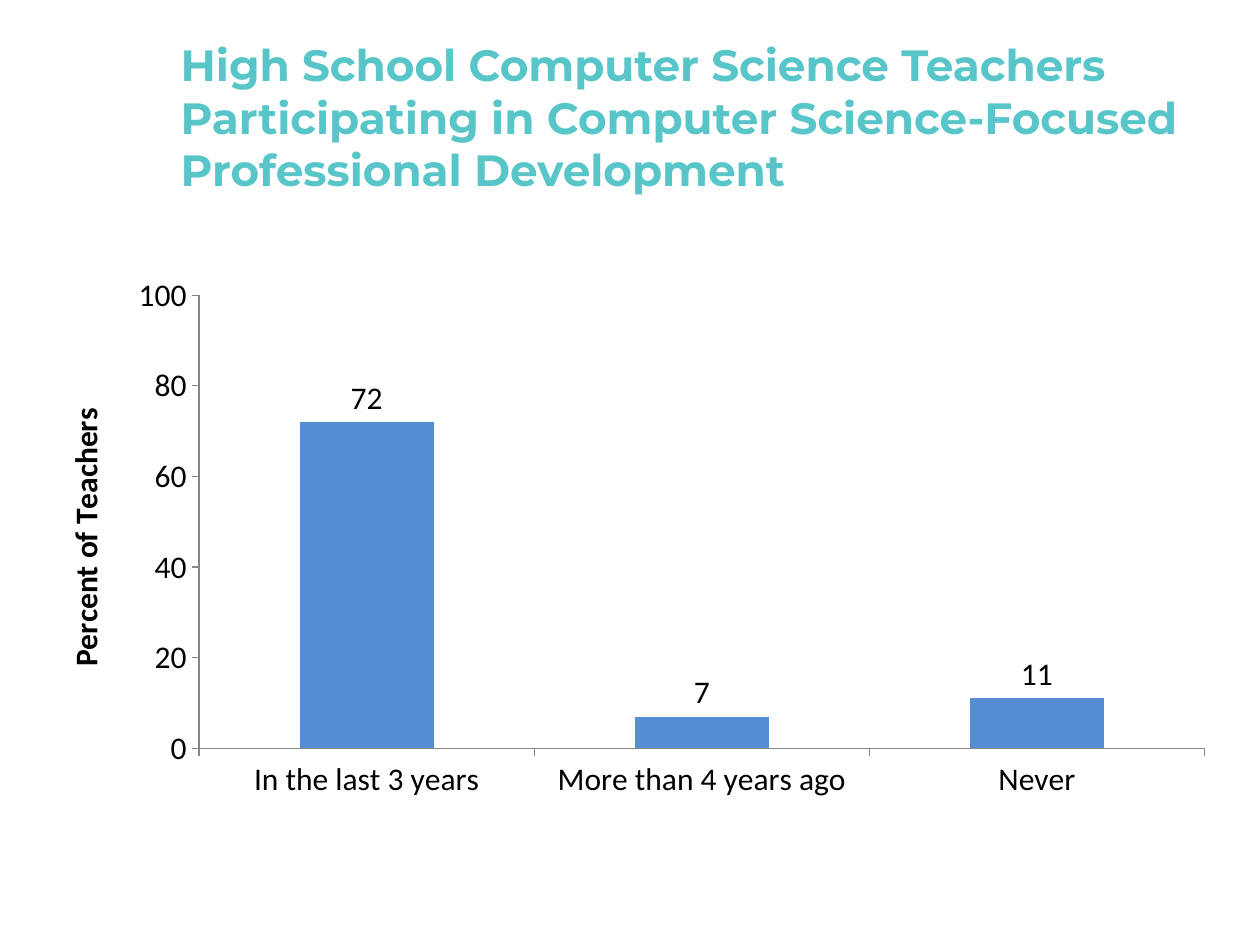
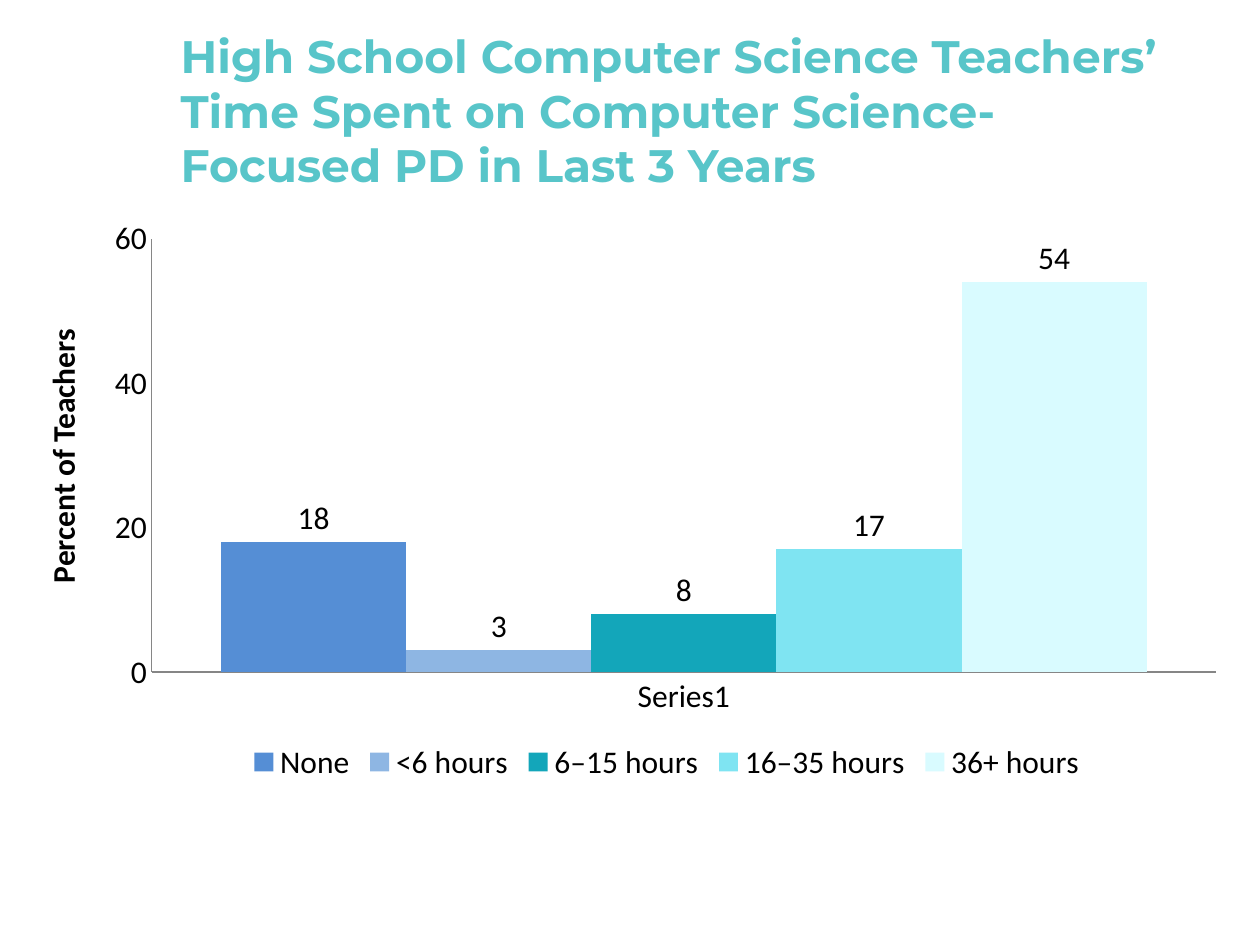
from pptx import Presentation
from pptx.chart.data import CategoryChartData
from pptx.dml.color import RGBColor
from pptx.enum.chart import XL_CHART_TYPE, XL_LABEL_POSITION, XL_LEGEND_POSITION, XL_TICK_MARK
from pptx.enum.text import MSO_ANCHOR, MSO_AUTO_SIZE, PP_ALIGN
from pptx.oxml import parse_xml
from pptx.oxml.ns import nsdecls, qn
from pptx.util import Pt

COLORS = {
    "title": "58C5C9",
    "text": "000000",
    "axis": "868686",
    "blue": "558ED5",
    "light blue": "8EB6E3",
    "teal": "13A6BA",
    "aqua": "7FE4F2",
    "pale aqua": "D9FBFF",
}
TITLE_FORMAT = {"name": "Montserrat", "bold": True}
CHART_FORMAT = {"name": "Calibri", "size": Pt(18), "bold": False}
AXIS_TITLE_FORMAT = {**CHART_FORMAT, "bold": True}
AXIS_TITLE = "Percent of Teachers"


def color(name):
    return RGBColor.from_string(COLORS[name])


def set_values(target, values):
    for attribute, value in values.items():
        setattr(target, attribute, value)


def format_font(font, values, color_name="text"):
    set_values(font, values)
    font.color.rgb = color(color_name)


def add_title_slide(presentation, title, top, size):
    slide = presentation.slides.add_slide(presentation.slide_layouts[5])
    shape = slide.shapes.title
    set_values(shape, {"left": Pt(96), "top": Pt(top), "width": Pt(588), "height": Pt(90)})
    frame = shape.text_frame
    frame.text = title
    set_values(frame, {"auto_size": MSO_AUTO_SIZE.NONE, "word_wrap": True,
                       "vertical_anchor": MSO_ANCHOR.MIDDLE})
    paragraph = frame.paragraphs[0]
    paragraph.alignment = PP_ALIGN.LEFT
    format_font(paragraph.runs[0].font, {**TITLE_FORMAT, "size": Pt(size)}, "title")
    return slide


def place_plot(chart, fractions):
    plot_area = chart.element.chart.plotArea
    for layout in plot_area.findall(qn("c:layout")):
        plot_area.remove(layout)
    modes = '<c:xMode val="edge"/><c:yMode val="edge"/>'
    sizes = "".join(f'<c:{key} val="{value}"/>' for key, value in zip("xywh", fractions))
    plot_area.insert(0, parse_xml(
        f'<c:layout {nsdecls("c")}><c:manualLayout><c:layoutTarget val="inner"/>'
        f'{modes}{sizes}</c:manualLayout></c:layout>'))


def add_column_chart(slide, box, categories, series_rows, maximum, gap, tick, plot_box):
    data = CategoryChartData()
    data.categories = categories
    for name, values, _ in series_rows:
        data.add_series(name, values)
    chart = slide.shapes.add_chart(
        XL_CHART_TYPE.COLUMN_CLUSTERED, *map(Pt, box), data).chart
    set_values(chart, {"has_title": False, "has_legend": False})
    format_font(chart.font, CHART_FORMAT)
    set_values(chart.value_axis, {"minimum_scale": 0, "maximum_scale": maximum, "major_unit": 20})
    for axis in (chart.category_axis, chart.value_axis):
        set_values(axis, {"has_major_gridlines": False, "major_tick_mark": tick,
                          "minor_tick_mark": XL_TICK_MARK.NONE})
        axis.format.line.color.rgb = color("axis")
        axis.format.line.width = Pt(0.75)
    plot = chart.plots[0]
    set_values(plot, {"gap_width": gap, "overlap": 0, "vary_by_categories": False})
    for series, (_, _, fill_name) in zip(plot.series, series_rows):
        series.format.fill.solid()
        series.format.fill.fore_color.rgb = color(fill_name)
        labels = series.data_labels
        set_values(labels, {"show_value": True, "position": XL_LABEL_POSITION.OUTSIDE_END})
        format_font(labels.font, CHART_FORMAT)
    place_plot(chart, plot_box)
    return chart


def add_chart_axis_title(axis):
    frame = axis.axis_title.text_frame
    frame.text = AXIS_TITLE
    format_font(frame.paragraphs[0].runs[0].font, AXIS_TITLE_FORMAT)


def add_side_label(slide, box):
    shape = slide.shapes.add_textbox(*map(Pt, box))
    shape.rotation = 270
    frame = shape.text_frame
    frame.text = AXIS_TITLE
    set_values(frame, {"word_wrap": False, "auto_size": MSO_AUTO_SIZE.SHAPE_TO_FIT_TEXT})
    paragraph = frame.paragraphs[0]
    paragraph.alignment = PP_ALIGN.CENTER
    format_font(paragraph.runs[0].font, AXIS_TITLE_FORMAT)


def add_legend(chart):
    chart.has_legend = True
    set_values(chart.legend, {"position": XL_LEGEND_POSITION.BOTTOM, "include_in_layout": False})
    format_font(chart.legend.font, CHART_FORMAT)


def build_participation_slide(presentation):
    slide = add_title_slide(
        presentation,
        "High School Computer Science Teachers Participating in "
        "Computer Science-Focused Professional Development", 21.6, 25)
    chart = add_column_chart(
        slide, (18, 150, 684, 312),
        ["In the last 3 years", "More than 4 years ago", "Never"],
        [("Series 1", (72, 7, 11), "blue")],
        100, 150, XL_TICK_MARK.OUTSIDE, (0.14, 0.06, 0.84, 0.83))
    add_chart_axis_title(chart.value_axis)


def build_time_slide(presentation):
    slide = add_title_slide(
        presentation,
        "High School Computer Science Teachers’ Time Spent on "
        "Computer Science-Focused PD in Last 3 Years", 18, 26)
    hours = [
        ("None", (18,), "blue"),
        ("<6 hours", (3,), "light blue"),
        ("6–15 hours", (8,), "teal"),
        ("16–35 hours", (17,), "aqua"),
        ("36+ hours", (54,), "pale aqua"),
    ]
    chart = add_column_chart(
        slide, (54, 120, 654, 330), ["Series1"], hours,
        60, 75, XL_TICK_MARK.NONE, (0.05, 0.05, 0.93, 0.75))
    add_legend(chart)
    add_side_label(slide, (-44.6, 246.2, 160.6, 28.8))


def main():
    presentation = Presentation()
    set_values(presentation, {"slide_width": Pt(720), "slide_height": Pt(540)})
    build_participation_slide(presentation)
    build_time_slide(presentation)
    presentation.save("out.pptx")


if __name__ == "__main__":
    main()
